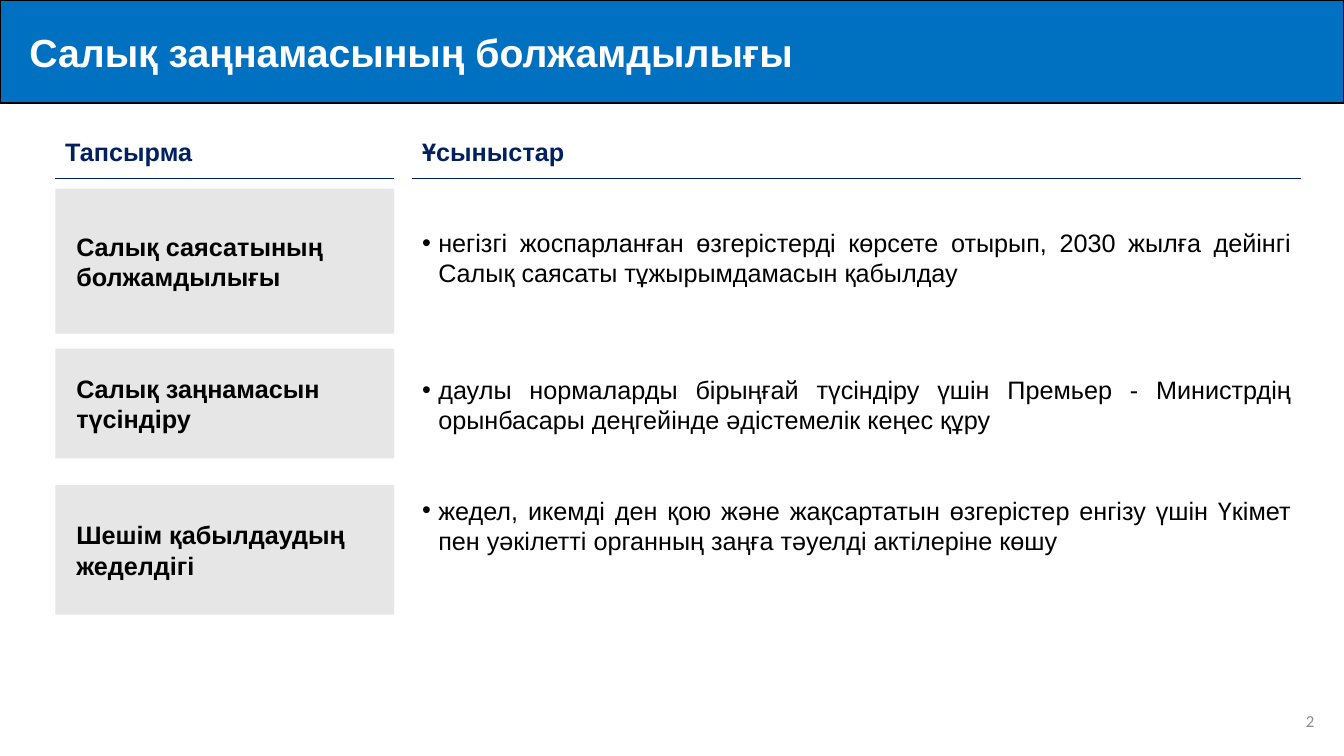
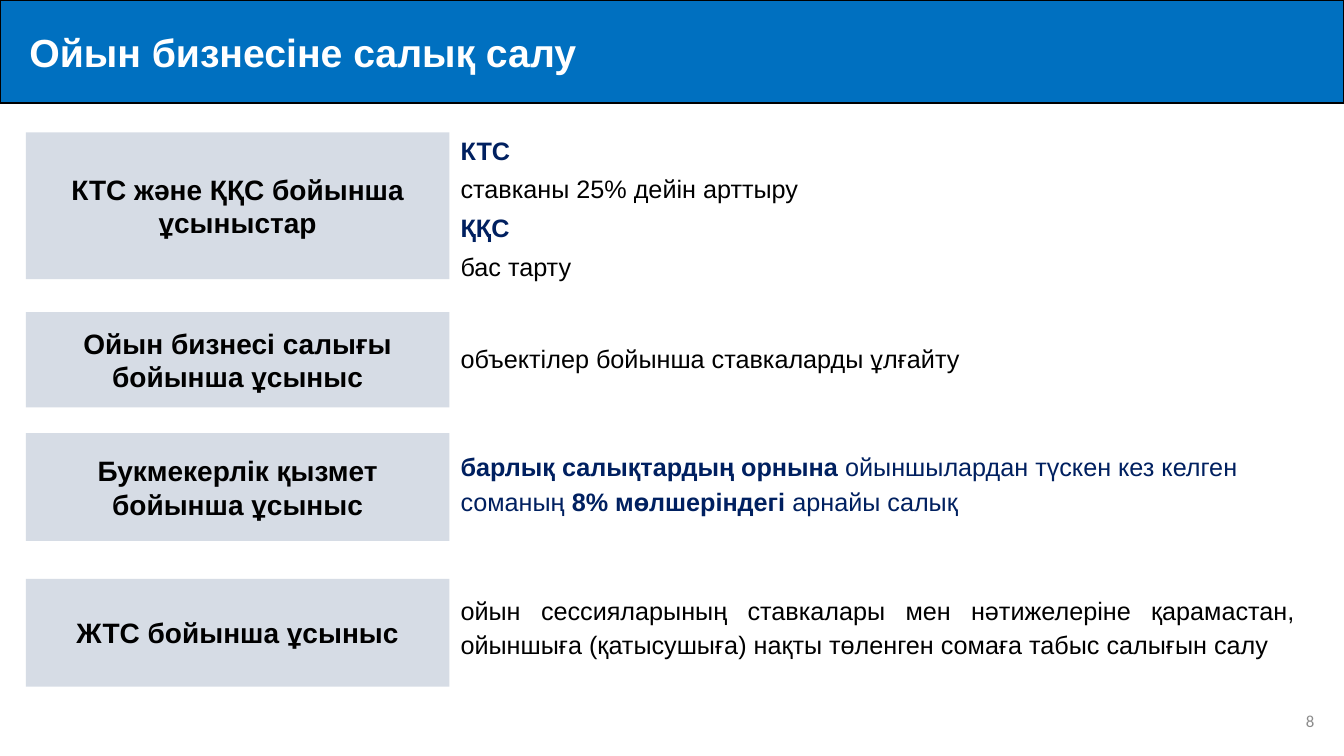
"""Build two slides on tax policy proposals."""
from lxml import etree
from pptx import Presentation, util as u
from pptx.dml import color
from pptx.enum import shapes, text
from pptx.oxml import ns

NAVY, BLACK, WHITE = "002060", "000000", "FFFFFF"
BLUE, LIGHT_GREY, STEEL, GREY = "0070C0", "E7E6E6", "D6DCE5", "8C8C8C"
LEFT, CENTER, RIGHT, JUSTIFY = (
    text.PP_ALIGN.LEFT, text.PP_ALIGN.CENTER, text.PP_ALIGN.RIGHT, text.PP_ALIGN.JUSTIFY)
MIDDLE, TOP = text.MSO_ANCHOR.MIDDLE, text.MSO_ANCHOR.TOP


def rgb(value):
    """Turn a hex string into a colour."""
    return color.RGBColor.from_string(value)


class Slides:
    """Hold the shared style and the current slide."""

    def __init__(self):
        """Start an empty wide deck."""
        self.deck = Presentation()
        self.deck.slide_width, self.deck.slide_height = u.Pt(960), u.Pt(540)
        self.page = None

    def start(self, title, number):
        """Add a slide with its title band and page number."""
        self.page = self.deck.slides.add_slide(self.deck.slide_layouts[5])
        band = self.page.shapes.title
        self.place(band, 0, 0, 960, 73.5)
        band.fill.solid()
        band.fill.fore_color.rgb = rgb(BLUE)
        band.line.color.rgb = rgb(BLACK)
        band.line.width = u.Pt(1)
        self.frame(band, MIDDLE, 21)
        self.add_paras(band, [[(title, WHITE, True)]], size=28)
        self.add_text((730, 500.5, 216, 28.5), [[(number, GREY, False)]],
                      size=12, align=RIGHT, anchor=MIDDLE, font="Calibri")

    def place(self, box, left, top, width, height):
        """Set the position and size of a box."""
        box.left, box.top = u.Pt(left), u.Pt(top)
        box.width, box.height = u.Pt(width), u.Pt(height)

    def frame(self, box, anchor, inset):
        """Set wrapping, anchor and left inset of a box."""
        frame = box.text_frame
        frame.word_wrap = True
        frame.auto_size = text.MSO_AUTO_SIZE.NONE
        frame.vertical_anchor = anchor
        frame.margin_left = u.Pt(inset)

    def add_paras(self, box, paras, size=18, align=LEFT, spacing=1, bullet=False, font="Arial"):
        """Add paragraphs of (text, colour, bold) spans."""
        frame = box.text_frame
        for index, spans in enumerate(paras):
            para = frame.add_paragraph() if index else frame.paragraphs[0]
            para.alignment = align
            para.line_spacing = spacing
            if index:
                para.space_before = u.Pt(3)
            if bullet:
                self.bullet(para)
            for words, colour, bold in spans:
                span = para.add_run()
                span.text = words
                span.font.name, span.font.size = font, u.Pt(size)
                span.font.bold = bold
                span.font.color.rgb = rgb(colour)

    def bullet(self, para):
        """Give a paragraph a hanging bullet."""
        props = para._p.get_or_add_pPr()
        indent = int(u.Pt(11.5))
        props.set("marL", str(indent))
        props.set("indent", str(-indent))
        etree.SubElement(props, ns.qn("a:buFont")).set("typeface", "Arial")
        etree.SubElement(props, ns.qn("a:buChar")).set("char", "•")

    def add_text(self, area, paras, anchor=TOP, inset=7.2, **style):
        """Add a text box."""
        box = self.page.shapes.add_textbox(*map(u.Pt, area))
        self.frame(box, anchor, inset)
        self.add_paras(box, paras, **style)

    def label(self, area, words, fill, inset=7.2, **style):
        """Add a filled label with bold text."""
        box = self.page.shapes.add_shape(shapes.MSO_SHAPE.RECTANGLE, *map(u.Pt, area))
        box.shadow.inherit = False
        box.fill.solid()
        box.fill.fore_color.rgb = rgb(fill)
        box.line.fill.background()
        self.frame(box, MIDDLE, inset)
        self.add_paras(box, [[(words, BLACK, True)]], **style)

    def rule(self, left, right, y):
        """Add a thin horizontal line."""
        line = self.page.shapes.add_connector(
            shapes.MSO_CONNECTOR.STRAIGHT, u.Pt(left), u.Pt(y), u.Pt(right), u.Pt(y))
        line.line.color.rgb = rgb(NAVY)
        line.line.width = u.Pt(1)
        etree.SubElement(line._element.spPr, ns.qn("a:effectLst"))

    def heading(self, left, width, words):
        """Add a column heading with a line below."""
        self.add_text((left, 93.5, 195, 29), [[(words, NAVY, True)]])
        self.rule(left, left + width, 127.5)


def predictability(slides):
    """Build the slide on predictable tax law."""
    slides.start("Салық заңнамасының болжамдылығы", "2")
    task_left, task_width, idea_left, idea_width = 39.5, 242, 294.5, 635
    slides.heading(task_left, task_width, "Тапсырма")
    slides.heading(idea_left, idea_width, "Ұсыныстар")
    rows = [
        (134.8, 103.5, "Салық саясатының болжамдылығы", 159,
         "негізгі жоспарланған өзгерістерді көрсете отырып, 2030 жылға дейінгі "
         "Салық саясаты тұжырымдамасын қабылдау"),
        (249, 78.5, "Салық заңнамасын түсіндіру", 264,
         "даулы нормаларды бірыңғай түсіндіру үшін Премьер - Министрдің "
         "орынбасары деңгейінде әдістемелік кеңес құру"),
        (346.5, 92.5, "Шешім қабылдаудың жеделдігі", 350,
         "жедел, икемді ден қою және жақсартатын өзгерістер енгізу үшін Үкімет "
         "пен уәкілетті органның заңға тәуелді актілеріне көшу"),
    ]
    for top, height, task, idea_top, idea in rows:
        slides.label((task_left, top, task_width, height), task, LIGHT_GREY, inset=15)
        slides.add_text((idea_left, idea_top, idea_width, 51), [[(idea, BLACK, False)]],
                        align=JUSTIFY, bullet=True)


def gambling(slides):
    """Build the slide on taxing the gambling business."""
    slides.start("Ойын бизнесіне салық салу", "8")
    rows = [
        (94.5, 105, "КТС және ҚҚС бойынша ұсыныстар", (90, 411, 116), JUSTIFY,
         [[("КТС", NAVY, True)], [("ставканы 25% дейін арттыру", BLACK, False)],
          [("ҚҚС", NAVY, True)], [("бас тарту", BLACK, False)]]),
        (223, 68, "Ойын бизнесі салығы бойынша ұсыныс", (239, 587, 30), JUSTIFY,
         [[("объектілер бойынша ставкаларды ұлғайту", BLACK, False)]]),
        (309.5, 77, "Букмекерлік қызмет бойынша ұсыныс", (316, 603, 55), LEFT,
         [[("барлық салықтардың орнына ", NAVY, True),
           ("ойыншылардан түскен кез келген соманың ", NAVY, False),
           ("8% мөлшеріндегі ", NAVY, True), ("арнайы салық", NAVY, False)]]),
        (413.5, 77, "ЖТС бойынша ұсыныс", (418.5, 611, 57), JUSTIFY,
         [[("ойын сессияларының ставкалары мен нәтижелеріне қарамастан, ойыншыға "
            "(қатысушыға) нақты төленген сомаға табыс салығын салу", BLACK, False)]]),
    ]
    for top, height, topic, (idea_top, width, idea_height), align, paras in rows:
        slides.label((18.5, top, 302.5, height), topic, STEEL, size=20, align=CENTER)
        slides.add_text((321, idea_top, width, idea_height), paras,
                        inset=8, align=align, spacing=1.14)


def main():
    """Build and save the deck."""
    slides = Slides()
    predictability(slides)
    gambling(slides)
    slides.deck.save("out.pptx")


if __name__ == "__main__":
    main()
